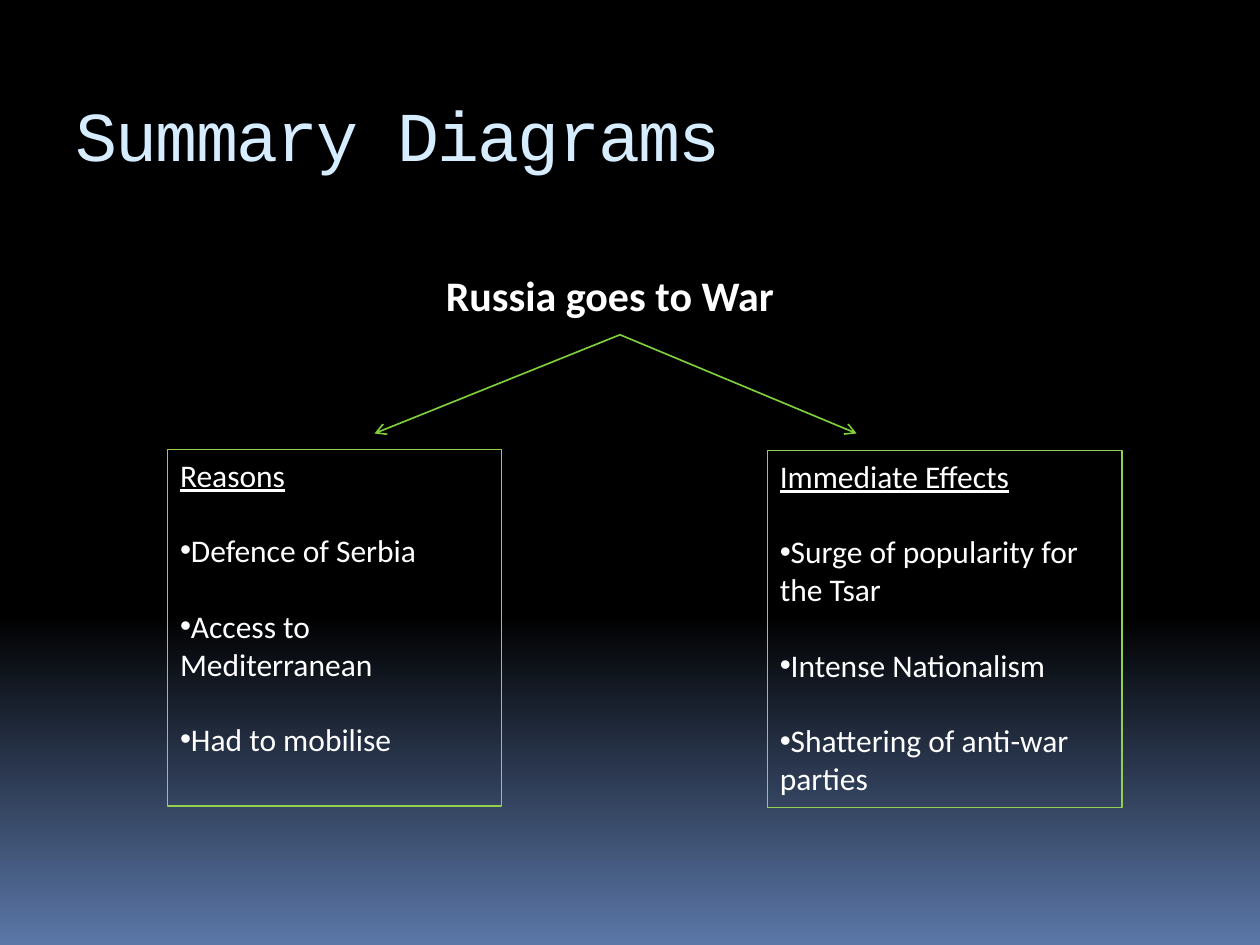
from lxml.etree import SubElement
from pptx import Presentation
from pptx.dml.color import RGBColor
from pptx.enum.shapes import MSO_CONNECTOR, MSO_SHAPE
from pptx.enum.text import MSO_ANCHOR, PP_ALIGN
from pptx.oxml.ns import qn
from pptx.util import Pt

WHITE = "FFFFFF"
BOX_LINE = "92D050"
ARROW_LINE = "7FD13B"
BODY_SIZE = 18
LINE_GAP = 21.6


def color(value):
    return RGBColor.from_string(value)


def set_background(slide):
    fill = slide.background.fill
    fill.gradient()
    fill.gradient_angle = 270
    for stop, position, value in zip(
        fill.gradient_stops, (0.65, 1), ("000000", "5B77A8")
    ):
        stop.position = position
        stop.color.rgb = color(value)


def add_run(paragraph, text, size, value=WHITE, font_name="Calibri"):
    run = paragraph.add_run()
    run.text = text
    run.font.size = Pt(size)
    run.font.name = font_name
    run.font.color.rgb = color(value)
    return run


def add_label(slide, left, top, width, height):
    """Add an empty wrapping text box and return its text frame."""
    shape = slide.shapes.add_textbox(Pt(left), Pt(top), Pt(width), Pt(height))
    shape.text_frame.word_wrap = True
    return shape.text_frame


def add_title(slide, text):
    frame = add_label(slide, 36, 40.3, 648, 72)
    frame.vertical_anchor = MSO_ANCHOR.MIDDLE
    run = add_run(frame.paragraphs[0], text, 40, "D6ECFF", "Courier New")
    run.font._element.set("spc", "-100")


def add_heading(slide, text):
    frame = add_label(slide, 247.7, 150.5, 225.4, 36)
    add_run(frame.paragraphs[0], text, 24).font.bold = True


def add_bullet(paragraph):
    properties = paragraph._p.get_or_add_pPr()
    SubElement(properties, qn("a:buFont"), typeface="Arial")
    SubElement(properties, qn("a:buChar"), char="•")


def add_list_box(slide, left, top, width, heading, items):
    shape = slide.shapes.add_shape(
        MSO_SHAPE.RECTANGLE, Pt(left), Pt(top), Pt(width), Pt(203.8)
    )
    shape.shadow.inherit = False
    shape.fill.background()
    shape.line.color.rgb = color(BOX_LINE)
    shape.line.width = Pt(0.75)
    frame = shape.text_frame
    frame.word_wrap = True
    frame.vertical_anchor = MSO_ANCHOR.TOP

    paragraph = frame.paragraphs[0]
    paragraph.alignment = PP_ALIGN.LEFT
    add_run(paragraph, heading, BODY_SIZE).font.underline = True
    for item in items:
        paragraph = frame.add_paragraph()
        paragraph.alignment = PP_ALIGN.LEFT
        paragraph.space_before = Pt(LINE_GAP)
        add_bullet(paragraph)
        add_run(paragraph, item, BODY_SIZE)


def add_arrow(slide, start, end):
    connector = slide.shapes.add_connector(
        MSO_CONNECTOR.STRAIGHT, *(Pt(value) for value in (*start, *end))
    )
    connector.line.color.rgb = color(ARROW_LINE)
    connector.line.width = Pt(0.94)
    SubElement(connector.line._get_or_add_ln(), qn("a:tailEnd"), type="arrow")
    SubElement(connector._element.spPr, qn("a:effectLst"))


def main():
    presentation = Presentation()
    presentation.slide_width = Pt(720)
    presentation.slide_height = Pt(540)
    slide = presentation.slides.add_slide(presentation.slide_layouts[6])

    set_background(slide)
    add_title(slide, "Summary Diagrams")
    add_heading(slide, "Russia goes to War")
    add_list_box(
        slide, 95.8, 256.8, 191, "Reasons",
        ["Defence of Serbia", "Access to Mediterranean", "Had to mobilise"],
    )
    add_list_box(
        slide, 438.5, 257.5, 202.7, "Immediate Effects",
        ["Surge of popularity for the Tsar", "Intense Nationalism",
         "Shattering of anti-war parties"],
    )
    for end_x in (214, 489.5):
        add_arrow(slide, (354.3, 191.3), (end_x, 247.7))

    presentation.save("out.pptx")


if __name__ == "__main__":
    main()
